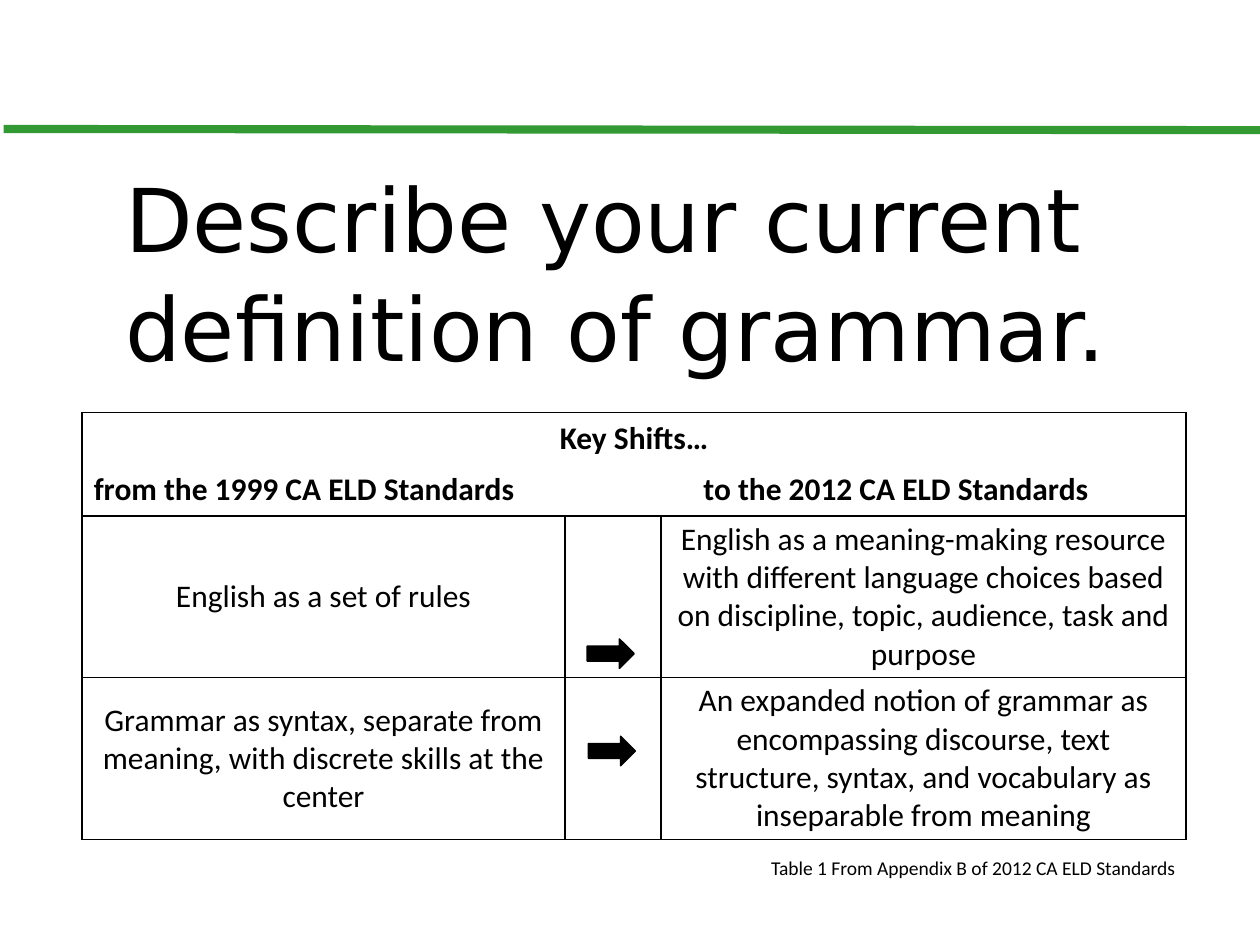
from lxml.etree import SubElement
from pptx import Presentation
from pptx.dml.color import RGBColor
from pptx.enum.shapes import MSO_CONNECTOR, MSO_SHAPE
from pptx.enum.text import MSO_ANCHOR, PP_ALIGN
from pptx.oxml.ns import qn
from pptx.util import Inches, Pt

BLACK = RGBColor(0x00, 0x00, 0x00)
WHITE = RGBColor(0xFF, 0xFF, 0xFF)
GREEN = RGBColor(0x33, 0x99, 0x33)

TITLE = {"name": "DejaVu Sans", "size": Pt(54)}
HEADING = {"name": "Calibri", "size": Pt(19.3), "bold": True}
BODY = {"name": "Calibri", "size": Pt(19.3), "bold": False}
CAPTION = {"name": "Calibri", "size": Pt(12)}

LEFT, CENTER = PP_ALIGN.LEFT, PP_ALIGN.CENTER
COLUMN_WIDTHS = [4.12, 0.35, 0.47, 4.48]
ROW_HEIGHTS = [0.44, 0.44, 1.38, 1.38]
SHIFTS = [
    ("English as a set of rules",
     "English as a meaning-making resource with different language choices "
     "based on discipline, topic, audience, task and purpose"),
    ("Grammar as syntax, separate from meaning, with discrete skills at the center",
     "An expanded notion of grammar as encompassing discourse, text structure, "
     "syntax, and vocabulary as inseparable from meaning"),
]
# Each cell: text, columns spanned, alignment, bordered sides, font
HEADER_ROWS = [
    [("Key Shifts…", 4, CENTER, "LRT", HEADING)],
    [("from the 1999 CA ELD Standards", 2, LEFT, "LB", HEADING),
     ("to the 2012 CA ELD Standards", 2, CENTER, "RB", HEADING)],
]
BODY_ROWS = [
    [(before, 1, CENTER, "LRTB", BODY),
     ("", 2, CENTER, "LRTB", BODY),
     (after, 1, CENTER, "LRTB", BODY)]
    for before, after in SHIFTS
]


class SlideBuilder:
    def __init__(self, slide, color=BLACK, border_width=Pt(1)):
        self.slide = slide
        self.color = color
        self.border_width = border_width

    def set_text(self, paragraph, text, font):
        paragraph.text = text
        for name, value in font.items():
            setattr(paragraph.font, name, value)
        paragraph.font.color.rgb = self.color

    def text(self, text, left, top, width, height, font, line_spacing=1.0):
        box = self.slide.shapes.add_textbox(
            Inches(left), Inches(top), Inches(width), Inches(height))
        box.text_frame.word_wrap = True
        paragraph = box.text_frame.paragraphs[0]
        paragraph.line_spacing = line_spacing
        self.set_text(paragraph, text, font)

    def rule(self, x1, y1, x2, y2, color, width):
        line = self.slide.shapes.add_connector(
            MSO_CONNECTOR.STRAIGHT, Inches(x1), Inches(y1), Inches(x2), Inches(y2))
        line.line.color.rgb = color
        line.line.width = Pt(width)
        SubElement(line._element.spPr, qn("a:effectLst"))

    def arrow(self, left, top, width, height):
        arrow = self.slide.shapes.add_shape(
            MSO_SHAPE.RIGHT_ARROW,
            Inches(left), Inches(top), Inches(width), Inches(height))
        arrow.shadow.inherit = False
        arrow.fill.solid()
        arrow.fill.fore_color.rgb = self.color
        arrow.line.color.rgb = self.color
        arrow.line.width = self.border_width

    def frame(self, cell, sides):
        """Draw the given sides of a cell, clear the others and fill it white."""
        properties = cell._tc.get_or_add_tcPr()
        for side in "LRTB":
            border = SubElement(properties, qn(f"a:ln{side}"), w=str(self.border_width))
            if side in sides:
                fill = SubElement(border, qn("a:solidFill"))
                SubElement(fill, qn("a:srgbClr"), val=str(self.color))
            else:
                SubElement(border, qn("a:noFill"))
        cell.fill.solid()
        cell.fill.fore_color.rgb = WHITE

    def table(self, left, top, widths, heights, rows):
        table = self.slide.shapes.add_table(
            len(heights), len(widths), Inches(left), Inches(top),
            Inches(sum(widths)), Inches(sum(heights))).table
        table.first_row = table.horz_banding = False
        for column, width in zip(table.columns, widths):
            column.width = Inches(width)
        for row, height in zip(table.rows, heights):
            row.height = Inches(height)
        for row_index, row in enumerate(rows):
            start = 0
            for text, span, alignment, sides, font in row:
                last = start + span - 1
                cell = table.cell(row_index, start)
                if span > 1:
                    cell.merge(table.cell(row_index, last))
                cell.vertical_anchor = MSO_ANCHOR.MIDDLE
                cell.margin_top = cell.margin_bottom = Inches(0.03)
                paragraph = cell.text_frame.paragraphs[0]
                paragraph.alignment = alignment
                self.set_text(paragraph, text, font)
                self.frame(cell, sides)
                for covered in range(start + 1, last + 1):
                    hidden = "L" if covered == last else "LR"
                    self.frame(table.cell(row_index, covered), set(sides) - set(hidden))
                start = last + 1


def main():
    presentation = Presentation()
    presentation.slide_width = Inches(10.75)
    presentation.slide_height = Inches(8)
    builder = SlideBuilder(presentation.slides.add_slide(presentation.slide_layouts[6]))

    builder.rule(0.03, 1.1, 10.75, 1.11, GREEN, 5)
    builder.text("Describe your current definition of grammar.",
                 0.97, 1.33, 8.88, 1.92, TITLE, line_spacing=1.03)
    builder.table(0.7, 3.52, COLUMN_WIDTHS, ROW_HEIGHTS, HEADER_ROWS + BODY_ROWS)
    for left, top in [(5.01, 5.45), (5.02, 6.28)]:
        builder.arrow(left, top, 0.4, 0.25)
    builder.text("Table 1 From Appendix B of 2012 CA ELD Standards",
                 6.48, 7.25, 3.79, 0.3, CAPTION)

    presentation.save("out.pptx")


if __name__ == "__main__":
    main()
